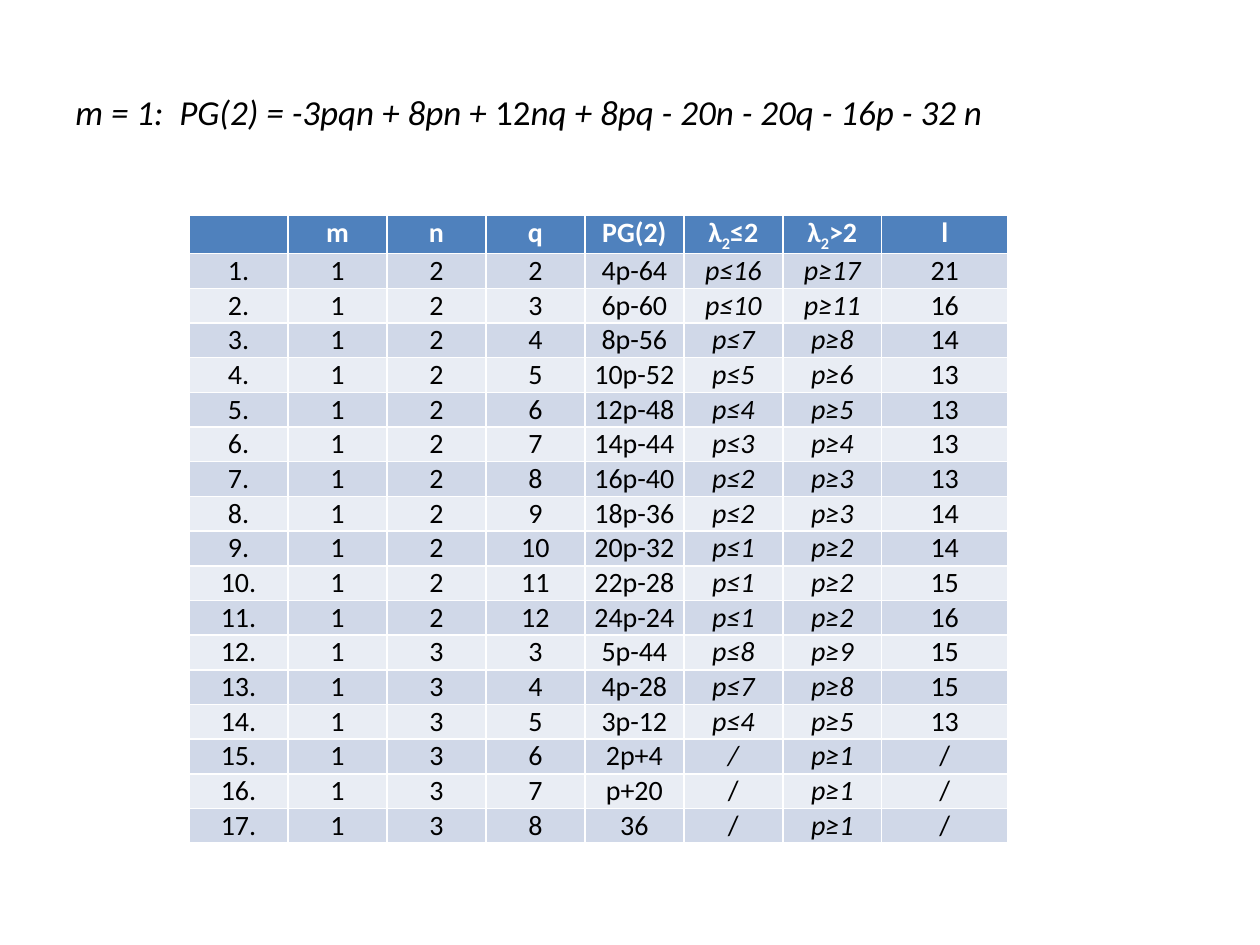
from lxml.etree import SubElement
from pptx import Presentation
from pptx.dml.color import RGBColor
from pptx.enum.text import PP_ALIGN as Align
from pptx.oxml.ns import qn
from pptx.util import Pt

COLORS = {"header": "4F81BD", "odd": "D0D8E8", "even": "E9EDF4", "ink": "000000", "light": "FFFFFF"}
FONT = "Calibri"
BODY_SIZE = 16
ROW_HEIGHT = 19.84
COLUMN_WIDTHS = [56.57] * 7 + [72]
LIMIT_COLUMNS = (5, 6)

FORMULA = [("m = 1:  PG(2) = -3pqn + 8pn + ", True), ("12", False),
           ("nq + 8pq - 20n - 20q - 16p - 32 n", True)]
HEADERS = [[""], ["m"], ["n"], ["q"], ["PG(2)"], ["λ", "2", "≤2"], ["λ", "2", ">2"], ["l"]]
CASES = [
    (2, 2, "4p-64", "p≤16", "p≥17", "21"),
    (2, 3, "6p-60", "p≤10", "p≥11", "16"),
    (2, 4, "8p-56", "p≤7", "p≥8", "14"),
    (2, 5, "10p-52", "p≤5", "p≥6", "13"),
    (2, 6, "12p-48", "p≤4", "p≥5", "13"),
    (2, 7, "14p-44", "p≤3", "p≥4", "13"),
    (2, 8, "16p-40", "p≤2", "p≥3", "13"),
    (2, 9, "18p-36", "p≤2", "p≥3", "14"),
    (2, 10, "20p-32", "p≤1", "p≥2", "14"),
    (2, 11, "22p-28", "p≤1", "p≥2", "15"),
    (2, 12, "24p-24", "p≤1", "p≥2", "16"),
    (3, 3, "5p-44", "p≤8", "p≥9", "15"),
    (3, 4, "4p-28", "p≤7", "p≥8", "15"),
    (3, 5, "3p-12", "p≤4", "p≥5", "13"),
    (3, 6, "2p+4", "/", "p≥1", "/"),
    (3, 7, "p+20", "/", "p≥1", "/"),
    (3, 8, "36", "/", "p≥1", "/"),
]


def add_text(paragraph, text, size, color, bold=False, italic=False):
    """Append a formatted run to the paragraph and return it."""
    run = paragraph.add_run()
    run.text = text
    run.font.name, run.font.size = FONT, Pt(size)
    run.font.bold, run.font.italic = bold, italic
    run.font.color.rgb = RGBColor.from_string(COLORS[color])
    return run


def add_formula(slide):
    """Write the polynomial above the table."""
    formula = slide.shapes.add_textbox(Pt(36), Pt(48.24), Pt(642.24), Pt(41.76))
    formula.text_frame.word_wrap = True
    for text, italic in FORMULA:
        add_text(formula.text_frame.paragraphs[0], text, 20, "ink", italic=italic)


def prepare_cell(cell, fill):
    """Fill a cell, drop its margins and return its centred paragraph."""
    cell.fill.solid()
    cell.fill.fore_color.rgb = RGBColor.from_string(COLORS[fill])
    cell.margin_left = cell.margin_right = cell.margin_top = cell.margin_bottom = Pt(0)
    paragraph = cell.text_frame.paragraphs[0]
    paragraph.alignment = Align.CENTER
    return paragraph


def fill_header(cell, parts):
    """Write a heading whose second part, if any, is a subscript."""
    paragraph = prepare_cell(cell, "header")
    if parts == [""]:
        SubElement(paragraph._p, qn("a:endParaRPr"), sz=str(BODY_SIZE * 100))
        return
    for position, part in enumerate(parts):
        run = add_text(paragraph, part, BODY_SIZE, "light", bold=True)
        if position == 1:
            run.font._element.set("baseline", "-25000")


def add_cases(slide):
    """Build the table of cases with its header and banded rows."""
    rows = len(CASES) + 1
    table = slide.shapes.add_table(rows, len(HEADERS), Pt(108), Pt(123.12),
                                   Pt(sum(COLUMN_WIDTHS)), Pt(rows * ROW_HEIGHT)).table
    for column, width in zip(table.columns, COLUMN_WIDTHS):
        column.width = Pt(width)
    for row in table.rows:
        row.height = Pt(ROW_HEIGHT)
    for column, parts in enumerate(HEADERS):
        fill_header(table.cell(0, column), parts)
    for number, case in enumerate(CASES, 1):
        band = "odd" if number % 2 else "even"
        for column, value in enumerate((f"{number}.", 1, *case)):
            italic = column in LIMIT_COLUMNS and (value != "/" or number == 15)
            paragraph = prepare_cell(table.cell(number, column), band)
            add_text(paragraph, str(value), BODY_SIZE, "ink", italic=italic)


def main():
    """Create the slide and save it."""
    deck = Presentation()
    deck.slide_width, deck.slide_height = Pt(720), Pt(540)
    slide = deck.slides.add_slide(deck.slide_layouts[6])
    add_formula(slide)
    add_cases(slide)
    deck.save("out.pptx")


if __name__ == "__main__":
    main()
